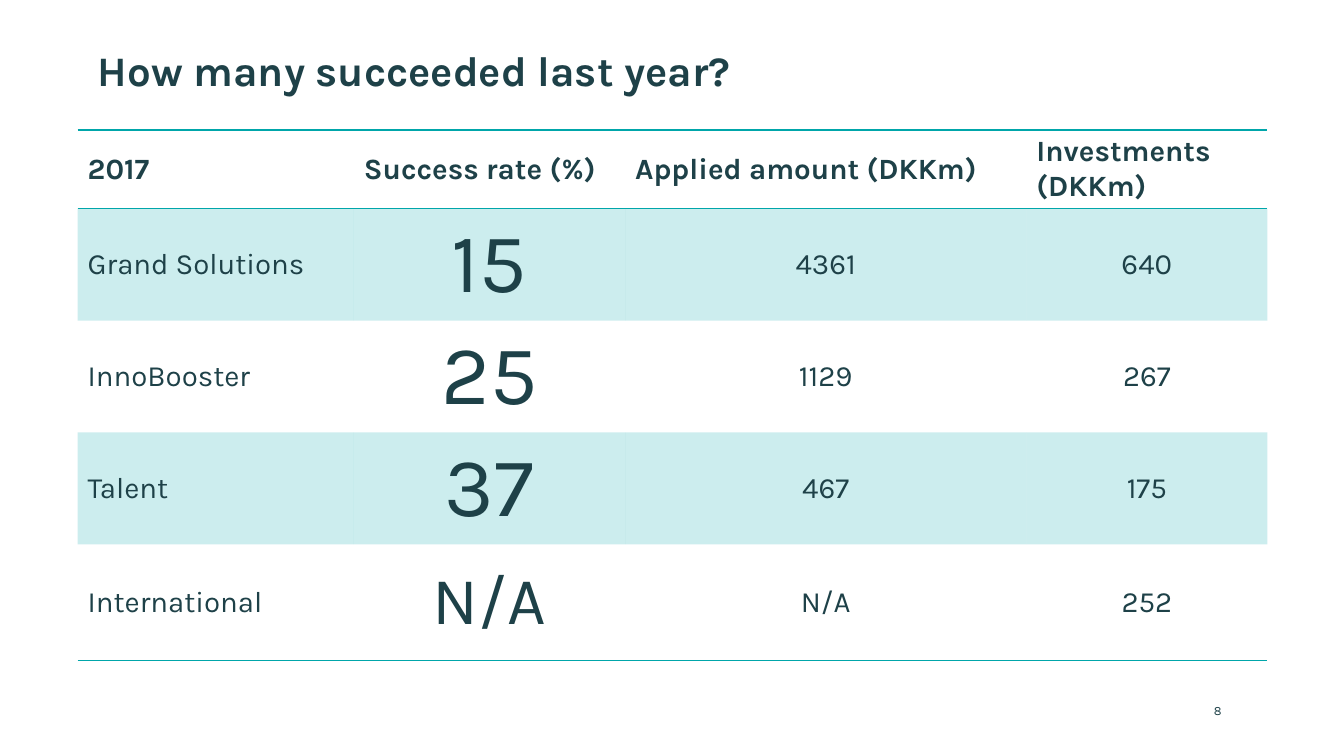
from lxml.etree import SubElement
from pptx import Presentation
from pptx.dml.color import RGBColor
from pptx.enum.text import MSO_ANCHOR, PP_ALIGN
from pptx.oxml.ns import qn
from pptx.util import Inches, Pt

COLORS = {"ink": "1E4148", "teal": "00A6AA"}
FONT = "Karla"
PLAIN_TABLE_STYLE = "{2D5ABB26-0587-4C30-8999-92F81FD0307C}"
COLUMN_WIDTHS = [2.74, 2.69, 3.98, 2.39]
ROW_HEIGHTS = [0.71, 1.11, 1.11, 1.11, 1.15]
ROWS = [
    ["2017", "Success rate (%)", "Applied amount (DKKm)", "Investments (DKKm)"],
    ["Grand Solutions", "15", "4361", "640"],
    ["InnoBooster", "25", "1129", "267"],
    ["Talent", "37", "467", "175"],
    ["International", "N/A", "N/A", "252"],
]


def write_text(frame, text, size, bold=False, align=PP_ALIGN.LEFT):
    """Fill a text frame with one formatted paragraph."""
    frame.text = text
    para = frame.paragraphs[0]
    para.alignment = align
    font = para.runs[0].font
    font.name, font.size, font.bold = FONT, Pt(size), bold
    font.color.rgb = RGBColor.from_string(COLORS["ink"])


def add_label(page, box, text, size, bold=False, inset=None, anchor=MSO_ANCHOR.TOP):
    """Place a text box in the given box."""
    frame = page.shapes.add_textbox(*map(Inches, box)).text_frame
    frame.word_wrap = True
    frame.vertical_anchor = anchor
    if inset is not None:
        frame.margin_left = frame.margin_right = Inches(inset)
        frame.margin_top = frame.margin_bottom = Inches(inset)
    write_text(frame, text, size, bold)


def style_cell(cell, sides, shaded):
    """Rule the named sides of a cell and tint it when shaded."""
    properties = cell._tc.get_or_add_tcPr()
    for side in sides:
        line = SubElement(properties, qn(f"a:ln{side}"), w=str(Pt(1)))
        paint = SubElement(line, qn("a:solidFill"))
        SubElement(paint, qn("a:srgbClr"), val=COLORS["teal"])
    if shaded:
        cell.fill.solid()
        cell.fill.fore_color.rgb = RGBColor.from_string(COLORS["teal"])
        color = properties.find(qn("a:solidFill")).find(qn("a:srgbClr"))
        SubElement(color, qn("a:alpha"), val="20000")
    else:
        cell.fill.background()


def add_results_table(page, box):
    """Place the success-rate table in the given box."""
    table = page.shapes.add_table(
        len(ROWS), len(COLUMN_WIDTHS), *map(Inches, box)
    ).table
    table.first_row = table.horz_banding = False
    table._tbl.tblPr.find(qn("a:tableStyleId")).text = PLAIN_TABLE_STYLE
    for column, width in zip(table.columns, COLUMN_WIDTHS):
        column.width = Inches(width)
    for row, height in zip(table.rows, ROW_HEIGHTS):
        row.height = Inches(height)

    last = len(ROWS) - 1
    for r, texts in enumerate(ROWS):
        sides = "TB" if r == 0 else "B" if r == last else ""
        for c, text in enumerate(texts):
            cell = table.cell(r, c)
            cell.vertical_anchor = MSO_ANCHOR.MIDDLE
            size = 21
            if r > 0 and c == 1:
                size = 60 if text.isdigit() else 48
            align = PP_ALIGN.CENTER if r > 0 and c > 0 else PP_ALIGN.LEFT
            write_text(cell.text_frame, text, size, r == 0, align)
            style_cell(cell, sides, r % 2 == 1)


def main():
    """Build and save the deck."""
    deck = Presentation()
    deck.slide_width, deck.slide_height = Inches(13.33), Inches(7.5)
    page = deck.slides.add_slide(deck.slide_layouts[6])
    add_results_table(page, (0.77, 1.29, sum(COLUMN_WIDTHS), sum(ROW_HEIGHTS)))
    add_label(page, (12.04, 6.85, 0.43, 0.4), "8", 9, inset=0, anchor=MSO_ANCHOR.MIDDLE)
    add_label(page, (0.87, 0.39, 11.61, 0.51), "How many succeeded last year?", 30, True)
    deck.save("out.pptx")


if __name__ == "__main__":
    main()
